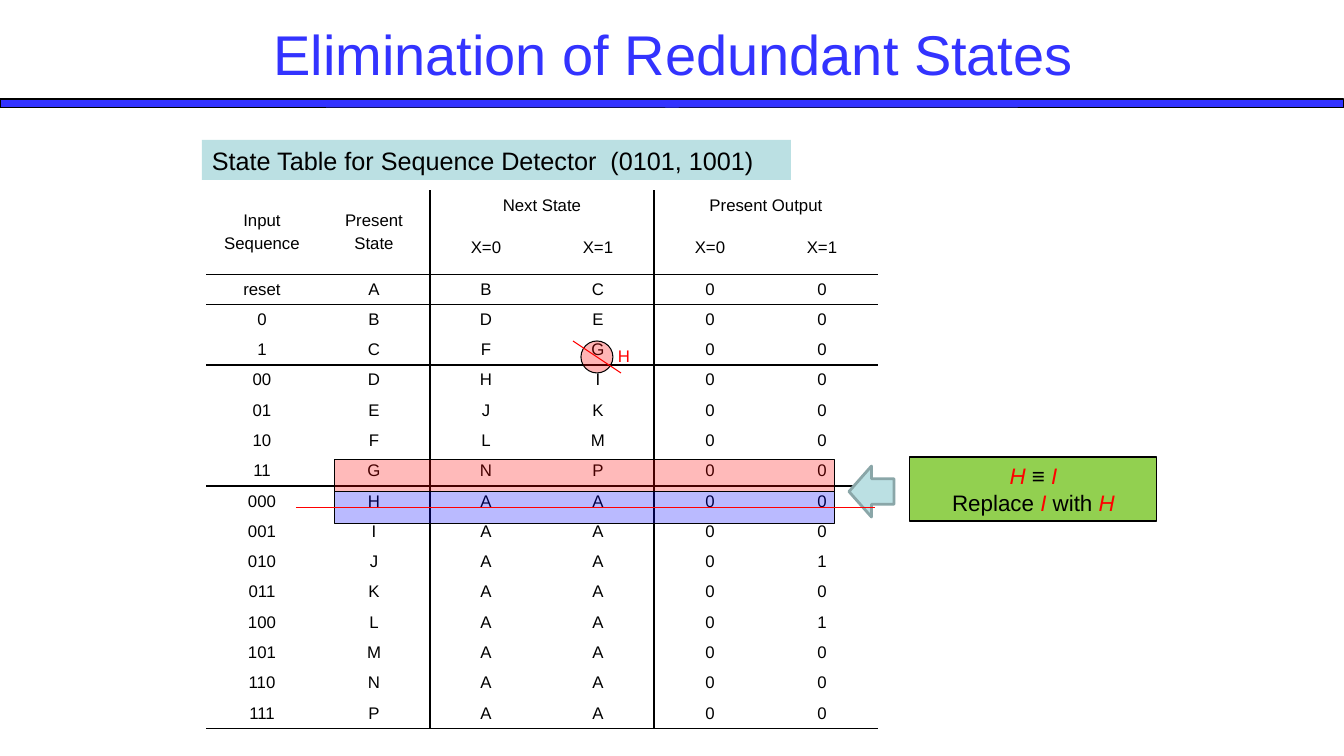
from dataclasses import dataclass

from lxml.etree import SubElement
from pptx import Presentation
from pptx.dml.color import RGBColor
from pptx.enum.shapes import MSO_CONNECTOR, MSO_SHAPE
from pptx.enum.text import MSO_ANCHOR, MSO_AUTO_SIZE, PP_ALIGN
from pptx.oxml.ns import qn
from pptx.util import Emu, Pt

COLORS = {
    "black": "000000",
    "blue": "3333FF",
    "red": "FF0000",
    "violet": "0000FF",
    "teal": "BBE0E3",
    "teal edge": "8AA6A8",
    "green": "92D050",
}
FONT = "Arial"
NO_STYLE_NO_GRID = "{2D5ABB26-0587-4C30-8999-92F81FD0307C}"
STATE_ROWS = [
    "reset A B C 0 0", "0 B D E 0 0", "1 C F G 0 0", "00 D H I 0 0",
    "01 E J K 0 0", "10 F L M 0 0", "11 G N P 0 0", "000 H A A 0 0",
    "001 I A A 0 0", "010 J A A 0 1", "011 K A A 0 0", "100 L A A 0 1",
    "101 M A A 0 0", "110 N A A 0 0", "111 P A A 0 0",
]
HEADER_ROWS = [
    ["Input\nSequence", "Present\nState", "Next State", "", "Present Output", ""],
    ["", "", "X=0", "X=1", "X=0", "X=1"],
]
HEADER_MERGES = [((0, 0), (1, 0)), ((0, 1), (1, 1)), ((0, 2), (0, 3)), ((0, 4), (0, 5))]
RULED_ROWS = {1, 2, 4, 8, 16}
RULED_COLUMNS = {1, 3}


@dataclass(frozen=True)
class Box:
    left: int
    top: int
    width: int
    height: int


@dataclass(frozen=True)
class Run:
    text: str
    color: str = "black"
    italic: bool = False


@dataclass(frozen=True)
class Figure:
    box: Box
    kind: MSO_SHAPE
    fill: str
    line: str | None = "black"
    line_width: float = 0.75
    opacity: int = 100
    rotation: int = 0


@dataclass(frozen=True)
class Strike:
    start: tuple[int, int]
    end: tuple[int, int]


TITLE_BOX = Box(194, 13, 958, 80)
TABLE_BOX = Box(206, 190, 672, 514)
REPLACEMENT_BOX = Box(608, 341, 32, 30)
TITLE_BAR = Figure(Box(0, 99, 1344, 9), MSO_SHAPE.RECTANGLE, "blue")
CAPTION = Figure(Box(202, 140, 589, 40), MSO_SHAPE.RECTANGLE, "teal", line=None)
NOTE = Figure(Box(910, 457, 247, 64), MSO_SHAPE.RECTANGLE, "green")
MARKERS = [
    Figure(Box(335, 460, 500, 32), MSO_SHAPE.RECTANGLE, "red", opacity=27),
    Figure(Box(335, 492, 500, 32), MSO_SHAPE.RECTANGLE, "violet", opacity=27),
    Figure(Box(581, 341, 32, 32), MSO_SHAPE.OVAL, "red", opacity=29),
    Figure(Box(849, 466, 45, 51), MSO_SHAPE.RIGHT_ARROW, "teal", "teal edge", 2, rotation=180),
]
STRIKES = [Strike((296, 508), (875, 508)), Strike((573, 341), (621, 373))]
NOTE_LINES = [
    [Run("H ", "red", True), Run("≡", "black", True), Run(" I", "red", True)],
    [Run("Replace "), Run("I", "red", True), Run(" with "), Run("H", "red", True)],
]


def px(value: int) -> Emu:
    return Emu(round(value * 914400 / 100.8))


def place(box: Box) -> tuple[Emu, Emu, Emu, Emu]:
    return px(box.left), px(box.top), px(box.width), px(box.height)


def rgb(name: str) -> RGBColor:
    return RGBColor.from_string(COLORS[name])


def write(frame, lines: list[list[Run]], size: int, align=PP_ALIGN.LEFT, space=0.0) -> None:
    for index, runs in enumerate(lines):
        paragraph = frame.add_paragraph() if index else frame.paragraphs[0]
        paragraph.alignment = align
        paragraph.space_before = Pt(space)
        for item in runs:
            run = paragraph.add_run()
            run.text = item.text
            run.font.name = FONT
            run.font.size = Pt(size)
            run.font.italic = item.italic
            run.font.color.rgb = rgb(item.color)


def draw_figure(slide, figure: Figure):
    shape = slide.shapes.add_shape(figure.kind, *place(figure.box))
    shape.shadow.inherit = False
    shape.rotation = figure.rotation
    shape.fill.solid()
    shape.fill.fore_color.rgb = rgb(figure.fill)
    if figure.opacity < 100:
        color = shape.fill._xPr.find(f"{qn('a:solidFill')}/{qn('a:srgbClr')}")
        SubElement(color, qn("a:alpha"), val=str(figure.opacity * 1000))
    if figure.line:
        shape.line.color.rgb = rgb(figure.line)
        shape.line.width = Pt(figure.line_width)
    else:
        shape.line.fill.background()
    return shape


def draw_labelled(slide, figure: Figure, lines: list[list[Run]], size: int, align) -> None:
    frame = draw_figure(slide, figure).text_frame
    frame.word_wrap = True
    frame.auto_size = MSO_AUTO_SIZE.SHAPE_TO_FIT_TEXT
    frame.vertical_anchor = MSO_ANCHOR.TOP
    write(frame, lines, size, align)


def draw_strike(slide, strike: Strike) -> None:
    ends = [px(value) for value in (*strike.start, *strike.end)]
    connector = slide.shapes.add_connector(MSO_CONNECTOR.STRAIGHT, *ends)
    connector.line.color.rgb = rgb("red")
    connector.line.width = Pt(0.75)
    SubElement(connector._element.spPr, qn("a:effectLst"))


def rule_cell(cell, row: int, column: int) -> None:
    properties = cell._tc.get_or_add_tcPr()
    edges = {
        "a:lnL": column - 1 in RULED_COLUMNS,
        "a:lnR": column in RULED_COLUMNS,
        "a:lnT": row - 1 in RULED_ROWS,
        "a:lnB": row in RULED_ROWS or (row == 0 and column < 2),
    }
    for tag, ruled in edges.items():
        edge = SubElement(properties, qn(tag), w=str(Pt(1)))
        if ruled:
            fill = SubElement(edge, qn("a:solidFill"))
            SubElement(fill, qn("a:srgbClr"), val=COLORS["black"])
        else:
            SubElement(edge, qn("a:noFill"))


def draw_state_table(slide) -> None:
    rows = HEADER_ROWS + [line.split() for line in STATE_ROWS]
    frame = slide.shapes.add_table(len(rows), len(rows[0]), *place(TABLE_BOX))
    table = frame.table
    table.first_row = table.horz_banding = False
    table._tbl.tblPr.find(qn("a:tableStyleId")).text = NO_STYLE_NO_GRID
    for first, last in HEADER_MERGES:
        table.cell(*first).merge(table.cell(*last))
    for row, texts in enumerate(rows):
        for column, text in enumerate(texts):
            cell = table.cell(row, column)
            rule_cell(cell, row, column)
            cell.fill.background()
            cell.vertical_anchor = MSO_ANCHOR.MIDDLE
            if text:
                lines = [[Run(line)] for line in text.split("\n")]
                write(cell.text_frame, lines, 12, PP_ALIGN.CENTER, 2.4)


def draw_title(slide) -> None:
    title = slide.shapes.title
    title.left, title.top, title.width, title.height = place(TITLE_BOX)
    title.text_frame.vertical_anchor = MSO_ANCHOR.MIDDLE
    write(title.text_frame, [[Run("Elimination of Redundant States", "blue")]], 40, PP_ALIGN.CENTER)


def draw_replacement(slide) -> None:
    frame = slide.shapes.add_textbox(*place(REPLACEMENT_BOX)).text_frame
    frame.word_wrap = False
    frame.auto_size = MSO_AUTO_SIZE.SHAPE_TO_FIT_TEXT
    write(frame, [[Run("H", "red")]], 12)


def main() -> None:
    presentation = Presentation()
    presentation.slide_width, presentation.slide_height = px(1344), px(756)
    slide = presentation.slides.add_slide(presentation.slide_layouts[5])
    draw_title(slide)
    draw_figure(slide, TITLE_BAR)
    caption = [[Run("State Table for Sequence Detector  (0101, 1001)")]]
    draw_labelled(slide, CAPTION, caption, 18, PP_ALIGN.LEFT)
    draw_state_table(slide)
    for marker in MARKERS:
        draw_figure(slide, marker)
    for strike in STRIKES:
        draw_strike(slide, strike)
    draw_labelled(slide, NOTE, NOTE_LINES, 16, PP_ALIGN.CENTER)
    draw_replacement(slide)
    presentation.save("out.pptx")


if __name__ == "__main__":
    main()
